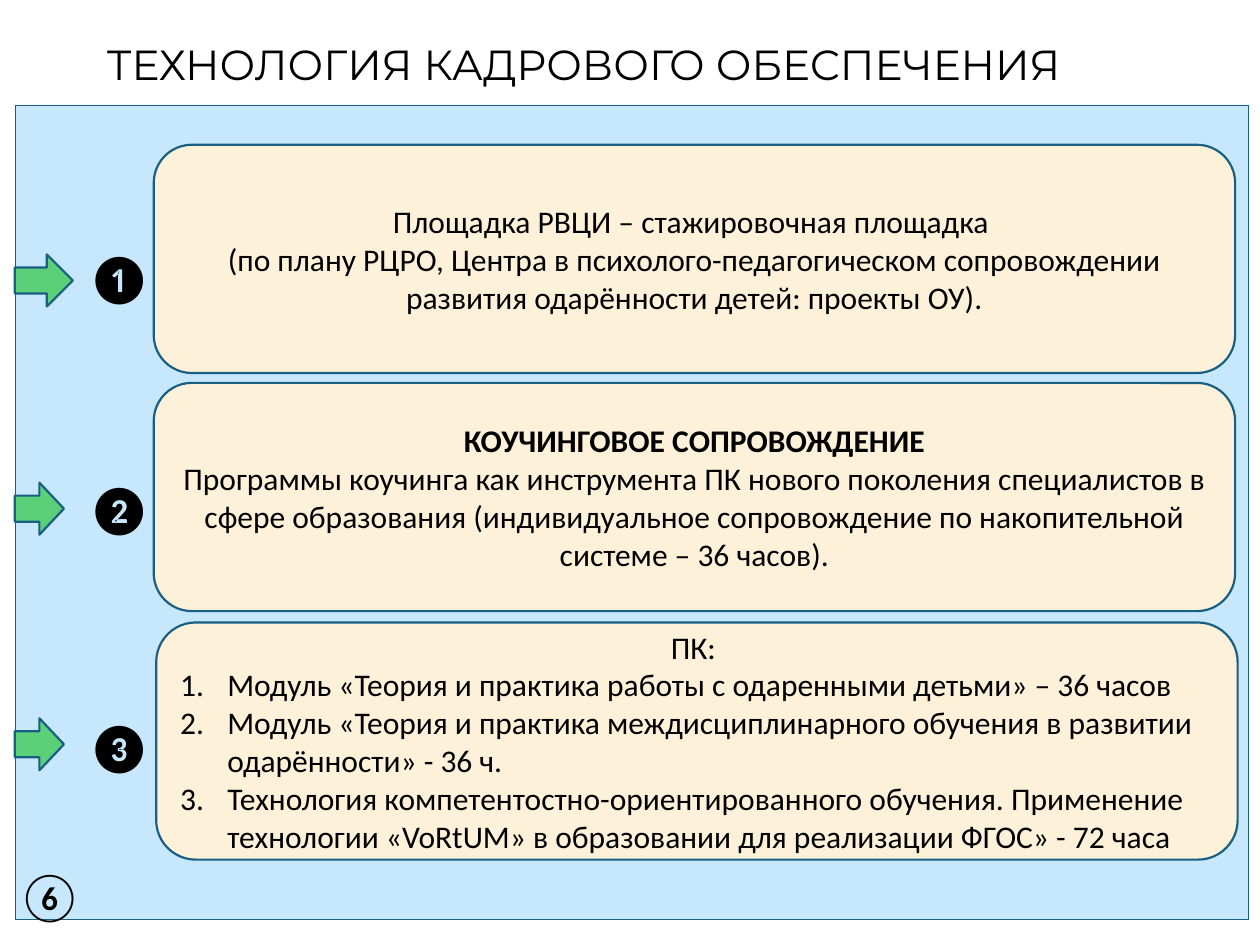
import pptx
import pptx.util
import pptx.dml.color
import pptx.enum.dml
import pptx.enum.shapes
import pptx.enum.text
import pptx.oxml
import pptx.oxml.ns

Cm = pptx.util.Cm
Pt = pptx.util.Pt
SHAPES = pptx.enum.shapes.MSO_SHAPE
ALIGN = pptx.enum.text.PP_ALIGN
ANCHOR = pptx.enum.text.MSO_ANCHOR

COLORS = {
    "panel": "C6E7FC",
    "panel_line": "1A5F84",
    "card": "FDF2D9",
    "line": "195F84",
    "arrow": "5BD078",
    "text": "000000",
}
BODY = {"name": "Calibri", "size": Pt(18), "bold": False}
HEADING = {**BODY, "bold": True}
BADGE = {"name": "Calibri", "size": Pt(28)}
TITLE = {"name": "Montserrat", "size": Pt(24), "bold": False}

ROWS = [
    {
        "box": (0.3, 2.92, 24.6, 4.6),
        "card_left": 2.8,
        "badge": ("❶", 1.94),
        "arrow": (2.21, 1.17),
        "lines": [
            ("Площадка РВЦИ – стажировочная площадка ", BODY, False),
            ("(по плану РЦРО, Центра в психолого-педагогическом сопровождении "
             "развития одарённости детей: проекты ОУ).", BODY, False),
        ],
    },
    {
        "box": (0.3, 7.72, 24.6, 4.6),
        "card_left": 2.8,
        "badge": ("❷", 1.8),
        "arrow": (2.01, 0.99),
        "lines": [
            ("КОУЧИНГОВОЕ СОПРОВОЖДЕНИЕ", HEADING, False),
            ("Программы коучинга как инструмента ПК нового поколения специалистов "
             "в сфере образования (индивидуальное сопровождение по накопительной "
             "системе – 36 часов).", BODY, False),
        ],
    },
    {
        "box": (0.3, 12.55, 24.65, 4.78),
        "card_left": 2.85,
        "badge": ("❸", 1.76),
        "arrow": (1.93, 0.99),
        "lines": [
            ("ПК: ", BODY, False),
            ("Модуль «Теория и практика работы с одаренными детьми» – 36 часов", BODY, True),
            ("Модуль «Теория и практика междисциплинарного обучения в развитии "
             "одарённости» - 36 ч.", BODY, True),
            ("Технология компетентостно-ориентированного обучения. Применение "
             "технологии «VoRtUM» в образовании для реализации ФГОС» - 72 часа", BODY, True),
        ],
    },
]


def color(name):
    return pptx.dml.color.RGBColor.from_string(COLORS[name])


def place(box):
    return [Cm(length) for length in box]


def write(para, text, style):
    span = para.add_run()
    span.text = text
    for name, value in style.items():
        setattr(span.font, name, value)
    span.font.color.rgb = color("text")


def number(para):
    properties = para._p.get_or_add_pPr()
    properties.set("marL", str(Cm(0.95)))
    properties.set("indent", str(Cm(-0.95)))
    bullet = pptx.oxml.parse_xml(
        f'<a:buAutoNum {pptx.oxml.ns.nsdecls("a")} type="arabicPeriod"/>')
    properties.append(bullet)


def add_figure(page, kind, box, fill, line="line", width=1.25):
    shape = page.shapes.add_shape(kind, *place(box))
    shape.shadow.inherit = False
    shape.fill.solid()
    shape.fill.fore_color.rgb = color(fill)
    shape.line.color.rgb = color(line)
    shape.line.width = Pt(width)
    return shape


def add_badge(page, symbol, left, top):
    frame = page.shapes.add_textbox(*place((left, top, 1.4, 1.45))).text_frame
    frame.word_wrap = True
    write(frame.paragraphs[0], symbol, BADGE)


def add_title(page, box):
    title = page.shapes.title
    title.left, title.top, title.width, title.height = place(box)
    frame = title.text_frame
    frame.word_wrap = False
    frame.vertical_anchor = ANCHOR.TOP
    frame.paragraphs[0].alignment = ALIGN.LEFT
    write(frame.paragraphs[0], "ТЕХНОЛОГИЯ КАДРОВОГО ОБЕСПЕЧЕНИЯ", TITLE)


def add_panel(page, box):
    panel = add_figure(page, SHAPES.RECTANGLE, box, "panel", "panel_line", 0.25)
    panel.line.dash_style = pptx.enum.dml.MSO_LINE.ROUND_DOT


def add_row(page, box, card_left, badge, arrow, lines):
    left, top, width, height = box
    card = add_figure(page, SHAPES.ROUNDED_RECTANGLE,
                      (left + card_left, top, width - card_left, height), "card")
    frame = card.text_frame
    frame.word_wrap = True
    frame.vertical_anchor = ANCHOR.MIDDLE
    for index, (text, style, numbered) in enumerate(lines):
        para = frame.add_paragraph() if index else frame.paragraphs[0]
        para.alignment = ALIGN.LEFT if numbered else ALIGN.CENTER
        if numbered:
            number(para)
        write(para, text, style)
    symbol, badge_top = badge
    add_badge(page, symbol, left + 1.2, top + badge_top)
    arrow_top, arrow_width = arrow
    add_figure(page, SHAPES.RIGHT_ARROW,
               (left, top + arrow_top, arrow_width, 1.05), "arrow")


def main():
    deck = pptx.Presentation()
    deck.slide_width, deck.slide_height = Cm(25.4), Cm(19.05)
    page = deck.slides.add_slide(deck.slide_layouts[5])
    add_title(page, (1.9, 0.64, 21.13, 1.27))
    add_panel(page, (0.3, 2.13, 24.87, 16.41))
    for row in ROWS:
        add_row(page, **row)
    add_badge(page, "⑥", 0.1, 17.33)
    deck.save("out.pptx")


if __name__ == "__main__":
    main()
